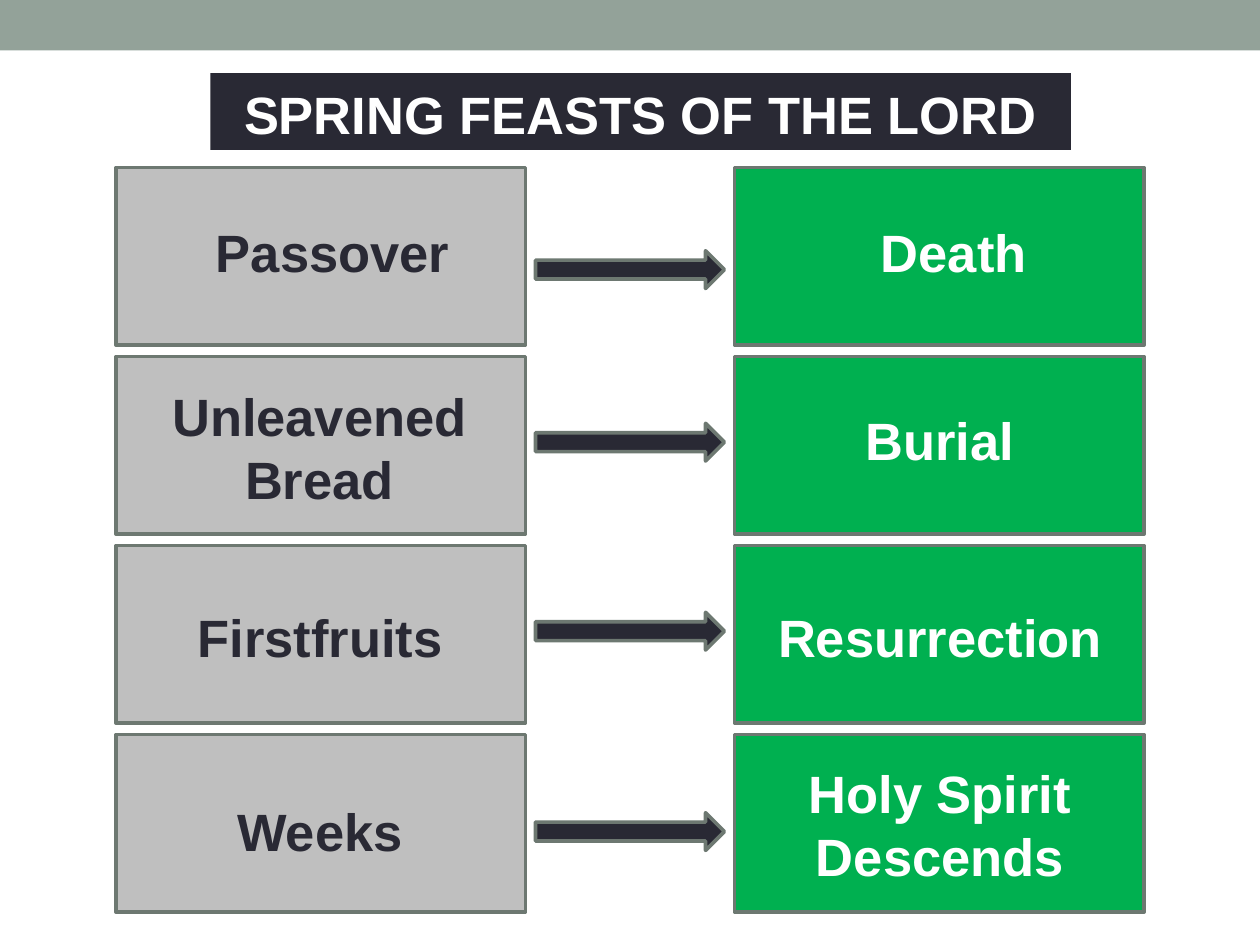
"""Build the slide that pairs each spring feast with its fulfilment."""
from pptx import Presentation
from pptx.dml.color import RGBColor
from pptx.enum.shapes import MSO_SHAPE
from pptx.enum.text import MSO_ANCHOR, PP_ALIGN
from pptx.util import Inches, Pt

RECT, ARROW = MSO_SHAPE.RECTANGLE, MSO_SHAPE.RIGHT_ARROW
TOP, CENTER = MSO_ANCHOR.TOP, PP_ALIGN.CENTER

TITLE = "SPRING FEASTS OF THE LORD"
FEASTS = [
    ("Passover", (1.42, 1.68, 2.44, 0.61)),
    ("Unleavened Bread", (1.24, 2.98, 2.59, 1.11)),
    ("Firstfruits", (1.32, 4.73, 2.44, 0.61)),
    ("Weeks", (1.32, 6.27, 2.44, 0.61)),
]
FULFILMENTS = [
    ("Death", (6.35, 1.68, 2.44, 0.61)),
    ("Burial", (6.24, 3.17, 2.44, 0.61)),
    ("Resurrection", (6, 4.73, 2.92, 0.61)),
    ("Holy Spirit Descends", (6.24, 5.97, 2.44, 1.11)),
]
ARROW_TOPS = [1.99, 3.36, 4.86, 6.45]

THEME = {
    "band": "93A299", "dark": "292934", "light": "FFFFFF", "feast": "BFBFBF",
    "fulfilment": "00B050", "outline": "6D7871", "line": 2.08, "leading": 36,
    "font": {"name": "Arial", "size": Pt(30), "bold": True},
}
BOX_W, BOX_H, FIRST_TOP, PITCH = 3.25, 1.41, 1.33, 1.5
COLUMNS = [
    (0.92, "feast", "dark", FEASTS),
    (5.83, "fulfilment", "light", FULFILMENTS),
]


def rgb(key):
    return RGBColor.from_string(THEME[key])


def paint(sp, fill):
    sp.fill.solid()
    sp.fill.fore_color.rgb = rgb(fill)


def add_shape(shapes, kind, at, fill, outlined=True):
    sp = shapes.add_shape(kind, *map(Inches, at))
    sp.shadow.inherit = False
    paint(sp, fill)
    if outlined:
        sp.line.color.rgb = rgb("outline")
        sp.line.width = Pt(THEME["line"])
    else:
        sp.line.fill.background()


def set_text(sp, text, color):
    tf = sp.text_frame
    frame = {"word_wrap": True, "vertical_anchor": TOP, "margin_top": Inches(0.07),
             "margin_bottom": Inches(0.03)}
    for name, value in frame.items():
        setattr(tf, name, value)
    p = tf.paragraphs[0]
    p.alignment = CENTER
    p.line_spacing = Pt(THEME["leading"])
    r = p.add_run()
    r.text = text
    for name, value in THEME["font"].items():
        setattr(r.font, name, value)
    r.font.color.rgb = rgb(color)


def add_title(s):
    sp = s.shapes.title
    sp.left, sp.top, sp.width, sp.height = map(Inches, (1.67, 0.58, 6.83, 0.61))
    paint(sp, "dark")
    set_text(sp, TITLE, "light")


def add_column(s, left, fill, color, labels):
    for row, (text, at) in enumerate(labels):
        group = s.shapes.add_group_shape()
        box = (left, FIRST_TOP + row * PITCH, BOX_W, BOX_H)
        add_shape(group.shapes, RECT, box, fill)
        label = group.shapes.add_textbox(*map(Inches, at))
        paint(label, fill)
        set_text(label, text, color)


def main():
    prs = Presentation()
    prs.slide_width, prs.slide_height = Inches(10), Inches(7.5)
    s = prs.slides.add_slide(prs.slide_layouts[5])
    add_shape(s.shapes, RECT, (0, 0, 10, 0.4), "band", outlined=False)
    add_title(s)
    for column in COLUMNS:
        add_column(s, *column)
    for top in ARROW_TOPS:
        add_shape(s.shapes, ARROW, (4.25, top, 1.5, 0.3), "dark")
    prs.save("out.pptx")


if __name__ == "__main__":
    main()
